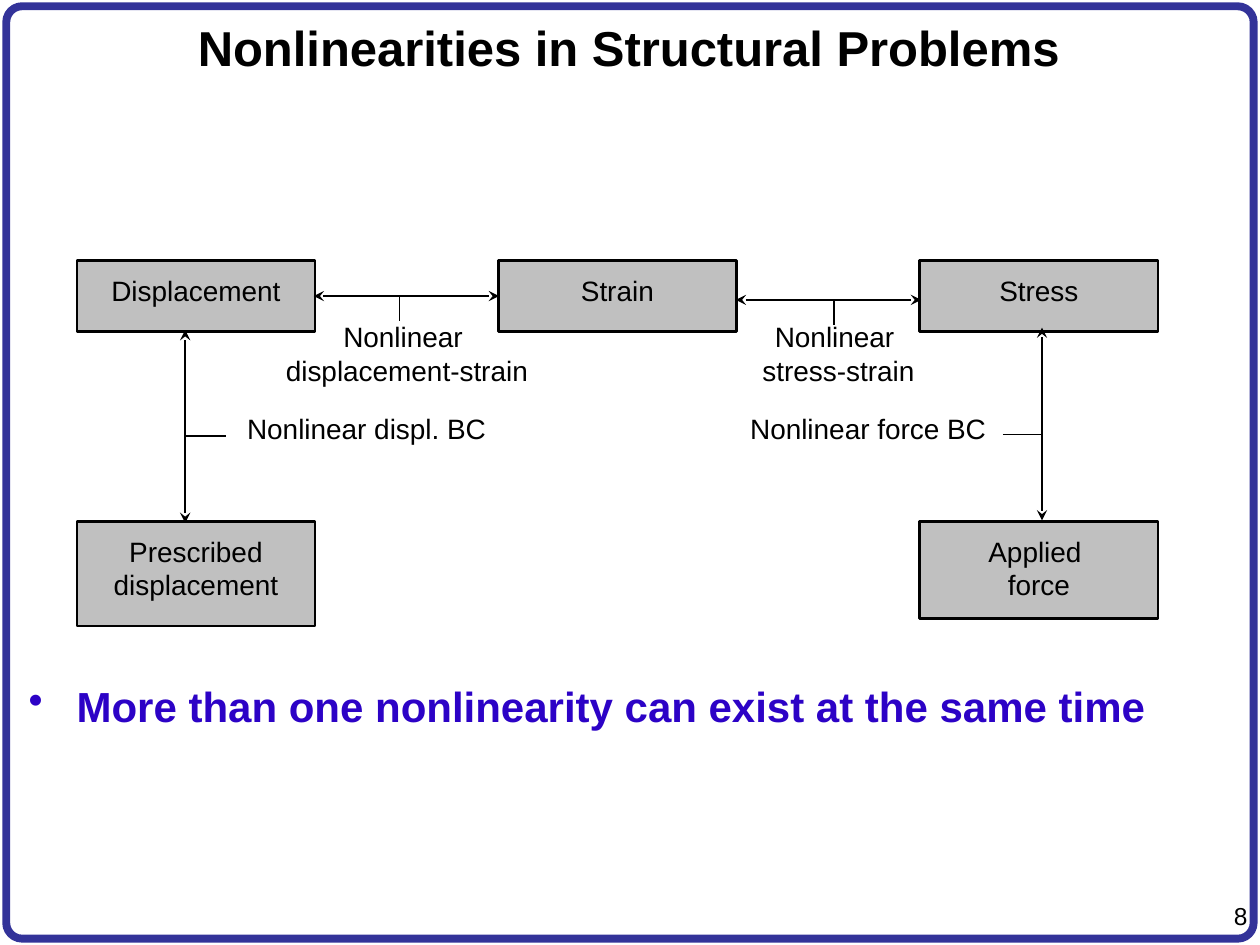
from pptx import Presentation
from pptx.dml.color import RGBColor
from pptx.enum.shapes import MSO_CONNECTOR, MSO_SHAPE
from pptx.enum.text import MSO_ANCHOR, PP_ALIGN
from pptx.oxml.ns import qn
from pptx.util import Inches, Pt
from lxml import etree

BLACK = RGBColor(0x00, 0x00, 0x00)
GRAY = RGBColor(0xC0, 0xC0, 0xC0)
NAVY = RGBColor(0x33, 0x33, 0x99)
VIOLET = RGBColor(0x2C, 0x02, 0xC6)
LEFT, CENTER, RIGHT = PP_ALIGN.LEFT, PP_ALIGN.CENTER, PP_ALIGN.RIGHT
TOP, MIDDLE = MSO_ANCHOR.TOP, MSO_ANCHOR.MIDDLE
RECTANGLE, ROUNDED = MSO_SHAPE.RECTANGLE, MSO_SHAPE.ROUNDED_RECTANGLE
STRAIGHT = MSO_CONNECTOR.STRAIGHT
FONT = "Arial"


def write_text(shape, lines, size, color=BLACK, bold=False, align=CENTER, anchor=TOP):
    """Fill a shape with one paragraph, its lines parted by line breaks."""
    frame = shape.text_frame
    frame.word_wrap = True
    frame.vertical_anchor = anchor
    paragraph = frame.paragraphs[0]
    paragraph.alignment = align
    for index, line in enumerate(lines):
        if index:
            paragraph.add_line_break()
        run = paragraph.add_run()
        run.text = line
        run.font.name = FONT
        run.font.size = Pt(size)
        run.font.bold = bold
        run.font.color.rgb = color
    return paragraph


def add_text(slide, box, lines, size, **style):
    text_box = slide.shapes.add_textbox(*(Inches(value) for value in box))
    return write_text(text_box, lines, size, **style)


def add_outline(slide, kind, box, color, width):
    shape = slide.shapes.add_shape(kind, *(Inches(value) for value in box))
    shape.shadow.inherit = False
    shape.fill.background()
    shape.line.color.rgb = color
    shape.line.width = Pt(width)
    return shape


def add_line(slide, start, end, width, arrows=False):
    line = slide.shapes.add_connector(
        STRAIGHT, *(Inches(value) for value in (*start, *end)))
    line.line.color.rgb = BLACK
    line.line.width = Pt(width)
    properties = line._element.spPr
    if arrows:
        outline = properties.find(qn("a:ln"))
        for tag in ("a:headEnd", "a:tailEnd"):
            etree.SubElement(outline, qn(tag), type="stealth")
    etree.SubElement(properties, qn("a:effectLst"))


def add_frame(slide, box):
    """Rounded border with the page number in its lower right corner."""
    left, top, width, height = box
    border = add_outline(slide, ROUNDED, box, NAVY, 4.5)
    border.adjustments[0] = 0.017
    number_box = (left + width - 0.49, top + height - 0.35, 0.54, 0.33)
    add_text(slide, number_box, ["8"], 14, align=RIGHT)


def add_bullet(slide, box, text):
    paragraph = add_text(slide, box, [text], 24, color=VIOLET, bold=True, align=LEFT)
    paragraph.space_before = Pt(4.8)
    properties = paragraph._p.get_or_add_pPr()
    properties.set("marL", str(Inches(0.38)))
    properties.set("indent", str(Inches(-0.38)))
    etree.SubElement(properties, qn("a:buChar"), char="•")


def add_diagram(slide, box):
    """Quantities in three columns, joined by the nonlinear relations."""
    left, top, width, height = box
    box_width, box_height = 1.89, 0.56
    step = (width - box_width) / 2
    lower = 2.07

    # Quantity boxes: column, offset from the top, height, text
    quantities = [
        (0, 0, box_height, ["Displacement"]),
        (1, 0, box_height, ["Strain"]),
        (2, 0, box_height, ["Stress"]),
        (0, lower, height, ["Prescribed", "displacement"]),
        (2, lower, height - 0.06, ["Applied ", "force"]),
    ]
    for column, offset, bottom, lines in quantities:
        depth = bottom - offset if offset else bottom
        place = (left + column * step, top + offset, box_width, depth)
        shape = add_outline(slide, RECTANGLE, place, BLACK, 1.5)
        shape.fill.solid()
        shape.fill.fore_color.rgb = GRAY
        shape.text_frame.margin_top = Inches(0.1)
        write_text(shape, lines, 16).space_after = Pt(10)

    # Double arrows between neighbouring boxes, then thin leaders to the labels
    lines = [
        ((1.88, 0.28), (3.35, 0.28), True),
        ((5.23, 0.31), (6.7, 0.31), True),
        ((0.86, 2.08), (0.86, 0.55), True),
        ((7.66, 2.06), (7.66, 0.53), True),
        ((2.56, 0.28), (2.56, 0.48), False),
        ((6.01, 0.31), (6.01, 0.51), False),
        ((0.87, 1.39), (1.18, 1.39), False),
        ((7.35, 1.38), (7.66, 1.38), False),
    ]
    for (x1, y1), (x2, y2), arrows in lines:
        add_line(slide, (left + x1, top + y1), (left + x2, top + y2),
                 1.5 if arrows else 0.75, arrows)

    # Relation labels
    labels = [
        ((1.42, 0.42, 2.4, 0.78), ["Nonlinear ", "displacement-strain"]),
        ((5.26, 0.42, 1.57, 0.78), ["Nonlinear ", "stress-strain"]),
        ((1.1, 1.15, 2.4, 0.47), ["Nonlinear displ. BC"]),
        ((5.08, 1.15, 2.4, 0.47), ["Nonlinear force BC"]),
    ]
    for (x, y, label_width, label_height), words in labels:
        place = (left + x, top + y, label_width, label_height)
        add_text(slide, place, words, 16).space_after = Pt(10)


def main():
    presentation = Presentation()
    presentation.slide_width = Inches(10)
    presentation.slide_height = Inches(7.5)
    slide = presentation.slides.add_slide(presentation.slide_layouts[6])

    add_frame(slide, (0.05, 0.05, 9.9, 7.4))
    add_text(slide, (0.04, 0.05, 9.9, 0.65), ["Nonlinearities in Structural Problems"],
             28, bold=True, anchor=MIDDLE)
    add_bullet(slide, (0.13, 5.35, 9.74, 1.57),
               "More than one nonlinearity can exist at the same time")
    add_diagram(slide, (0.61, 2.07, 8.58, 2.9))
    presentation.save("out.pptx")


if __name__ == "__main__":
    main()
